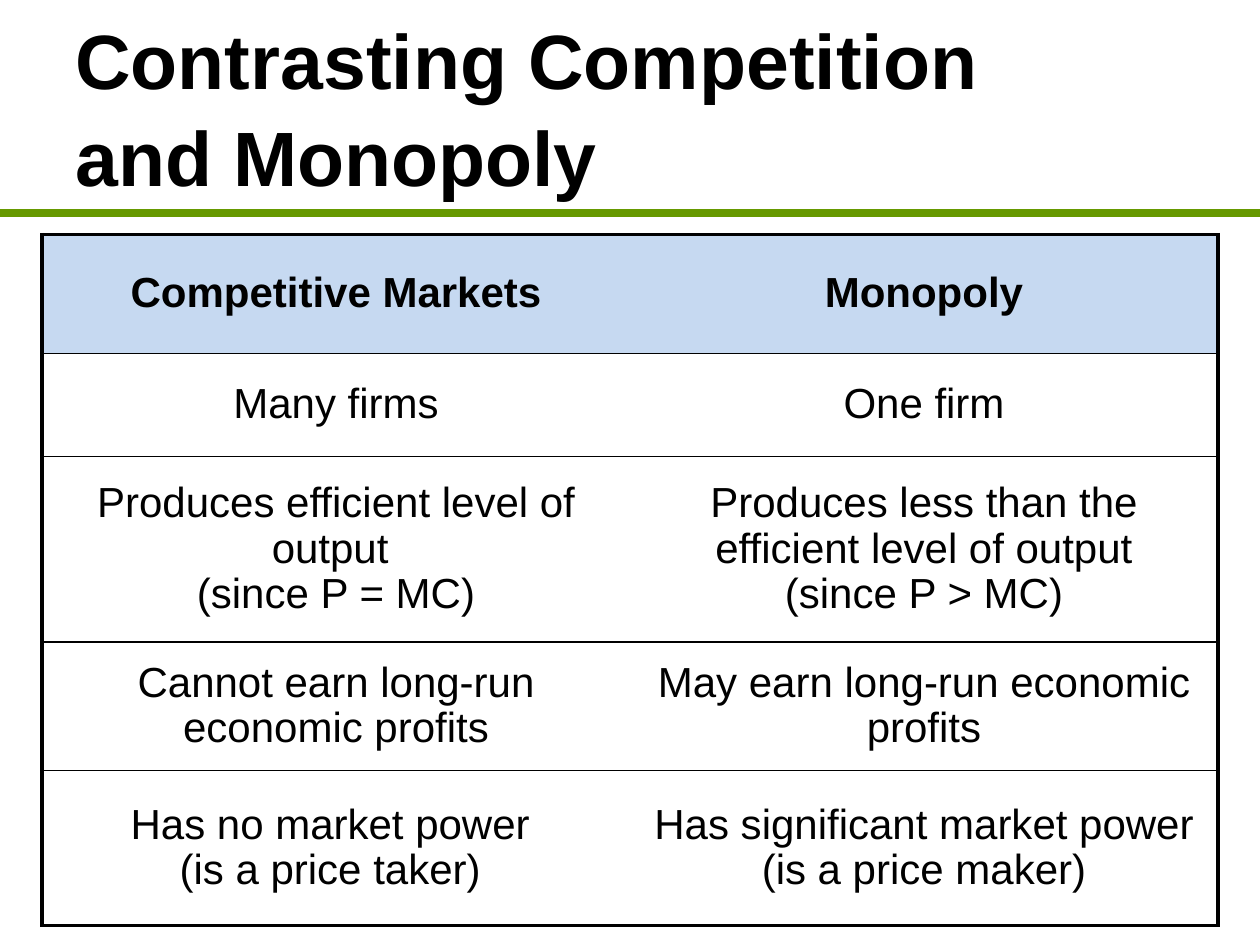
"""Build a slide that contrasts competitive markets with monopoly in a table."""
from dataclasses import dataclass

from lxml.etree import SubElement
from pptx import Presentation
from pptx.dml.color import RGBColor as Color
from pptx.enum.shapes import MSO_CONNECTOR as Connector
from pptx.enum.text import MSO_ANCHOR as Anchor, PP_ALIGN as Align
from pptx.oxml.ns import qn
from pptx.util import Pt


@dataclass(frozen=True)
class Theme:
    """Colours, type sizes and line widths."""
    font: str = "Arial"
    ink: str = "000000"
    accent: str = "669900"
    header: str = "C6D9F1"
    title_size: float = 44
    cell_size: float = 24
    rule: float = 4.5
    outer: float = 2.25
    inner: float = 1


@dataclass(frozen=True)
class Row:
    """One table row: its height and its two texts."""
    height: float
    competitive: str
    monopoly: str


THEME = Theme()
WIDTH, HEIGHT = 720, 540
COLUMN_WIDTH = 336
ROWS = [
    Row(68, "Competitive Markets", "Monopoly"),
    Row(59, "Many firms", "One firm"),
    Row(106, "Produces efficient level of output \n(since P = MC)",
        "Produces less than the efficient level of output\v(since P > MC)"),
    Row(73.5, "Cannot earn long-run economic profits",
        "May earn long-run economic profits"),
    Row(88.5, "Has no market power \n(is a price taker) ",
        "Has significant market power\n(is a price maker)"),
]


def set_values(target, values: dict) -> None:
    """Set each named attribute on the target."""
    for name, value in values.items():
        setattr(target, name, value)


def write_text(frame, text: str, size: float, bold: bool, align, spacing: float) -> None:
    """Fill a text frame and format its paragraphs and spans."""
    frame.text = text
    for para in frame.paragraphs:
        set_values(para, {"alignment": align, "line_spacing": spacing})
        for span in para.runs:
            set_values(span.font, {"name": THEME.font, "size": Pt(size), "bold": bold})
            span.font.color.rgb = Color.from_string(THEME.ink)


def draw_title(page, text: str) -> None:
    """Draw the slide title."""
    box = page.shapes.add_textbox(Pt(36), Pt(0), Pt(648), Pt(120))
    set_values(box.text_frame, {"word_wrap": True, "vertical_anchor": Anchor.MIDDLE})
    write_text(box.text_frame, text, THEME.title_size, True, Align.LEFT, 1.05)


def draw_rule(page, top: float) -> None:
    """Draw the full-width line under the title."""
    rule = page.shapes.add_connector(Connector.STRAIGHT, Pt(0), Pt(top), Pt(WIDTH), Pt(top))
    rule.line.color.rgb = Color.from_string(THEME.accent)
    rule.line.width = Pt(THEME.rule)
    SubElement(rule._element.spPr, qn("a:effectLst"))


def set_borders(cell, widths: dict[str, float]) -> None:
    """Give each side of a cell its line, or none where the width is zero."""
    properties = cell._tc.get_or_add_tcPr()
    for side, width in widths.items():
        line = SubElement(properties, qn(f"a:ln{side}"), w=str(Pt(width)))
        if width:
            fill = SubElement(line, qn("a:solidFill"))
            SubElement(fill, qn("a:srgbClr"), val=THEME.ink)
        else:
            SubElement(line, qn("a:noFill"))


def draw_table(page, rows: list[Row], left: float, top: float) -> None:
    """Draw the comparison with a thick frame and thin lines between rows."""
    total = sum(row.height for row in rows)
    table = page.shapes.add_table(
        len(rows), 2, Pt(left), Pt(top), Pt(2 * COLUMN_WIDTH), Pt(total)).table
    for column in table.columns:
        column.width = Pt(COLUMN_WIDTH)
    for index, row in enumerate(rows):
        table.rows[index].height = Pt(row.height)
        first, last = index == 0, index == len(rows) - 1
        for position, text in enumerate((row.competitive, row.monopoly)):
            cell = table.cell(index, position)
            set_values(cell, {
                "vertical_anchor": Anchor.MIDDLE,
                "margin_left": Pt(5), "margin_right": Pt(5),
                "margin_top": Pt(0), "margin_bottom": Pt(0),
            })
            set_borders(cell, {
                "L": 0 if position else THEME.outer,
                "R": THEME.outer if position else 0,
                "T": THEME.outer if first else THEME.inner,
                "B": THEME.outer if last else THEME.inner,
            })
            if first:
                cell.fill.solid()
                cell.fill.fore_color.rgb = Color.from_string(THEME.header)
            else:
                cell.fill.background()
            write_text(cell.text_frame, text, THEME.cell_size, first, Align.CENTER, 0.97)


def main() -> None:
    """Build and save the deck."""
    deck = Presentation()
    set_values(deck, {"slide_width": Pt(WIDTH), "slide_height": Pt(HEIGHT)})
    page = deck.slides.add_slide(deck.slide_layouts[6])
    draw_rule(page, 121.7)
    draw_title(page, "Contrasting Competition \vand Monopoly")
    draw_table(page, ROWS, 24, 134)
    deck.save("out.pptx")


if __name__ == "__main__":
    main()
